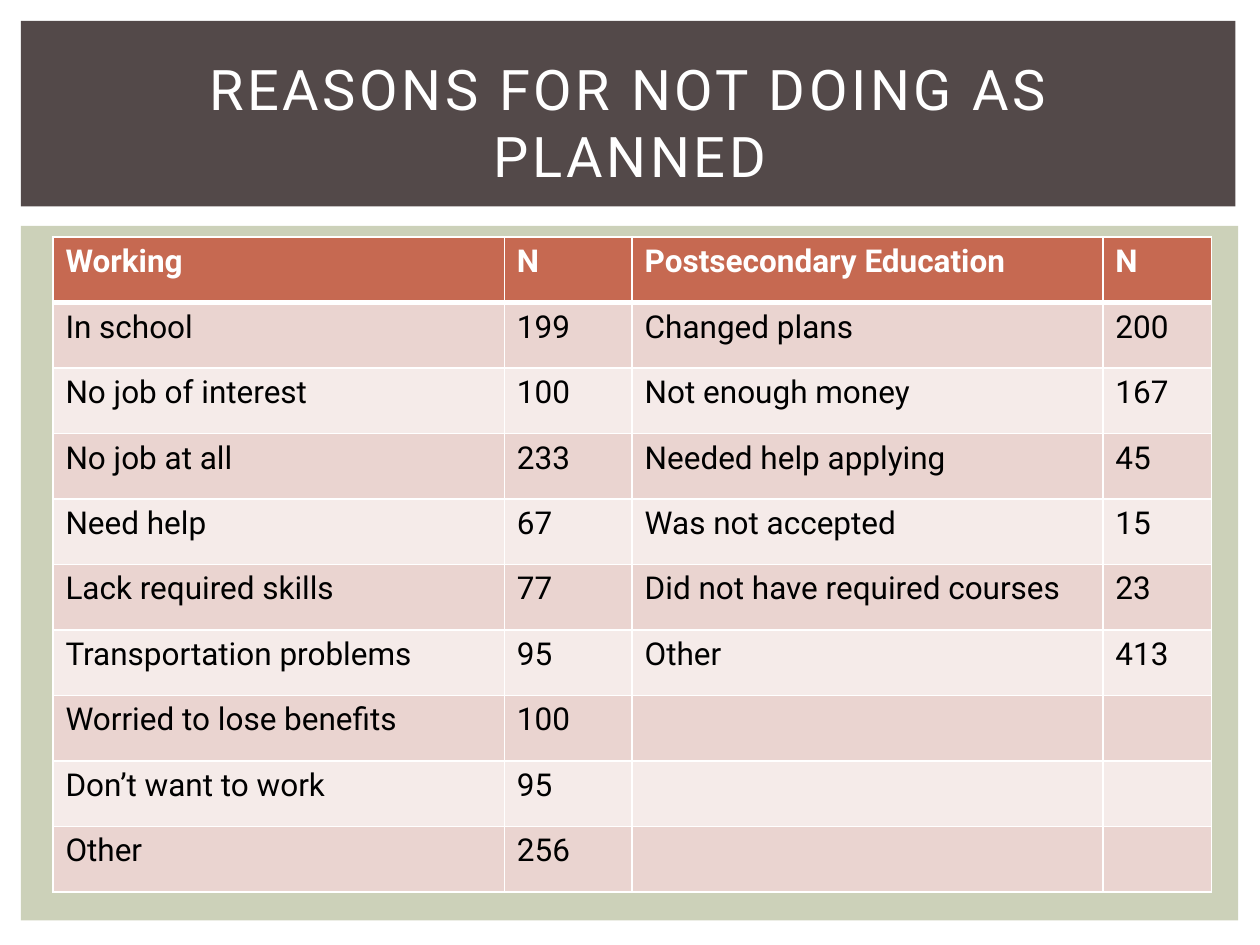
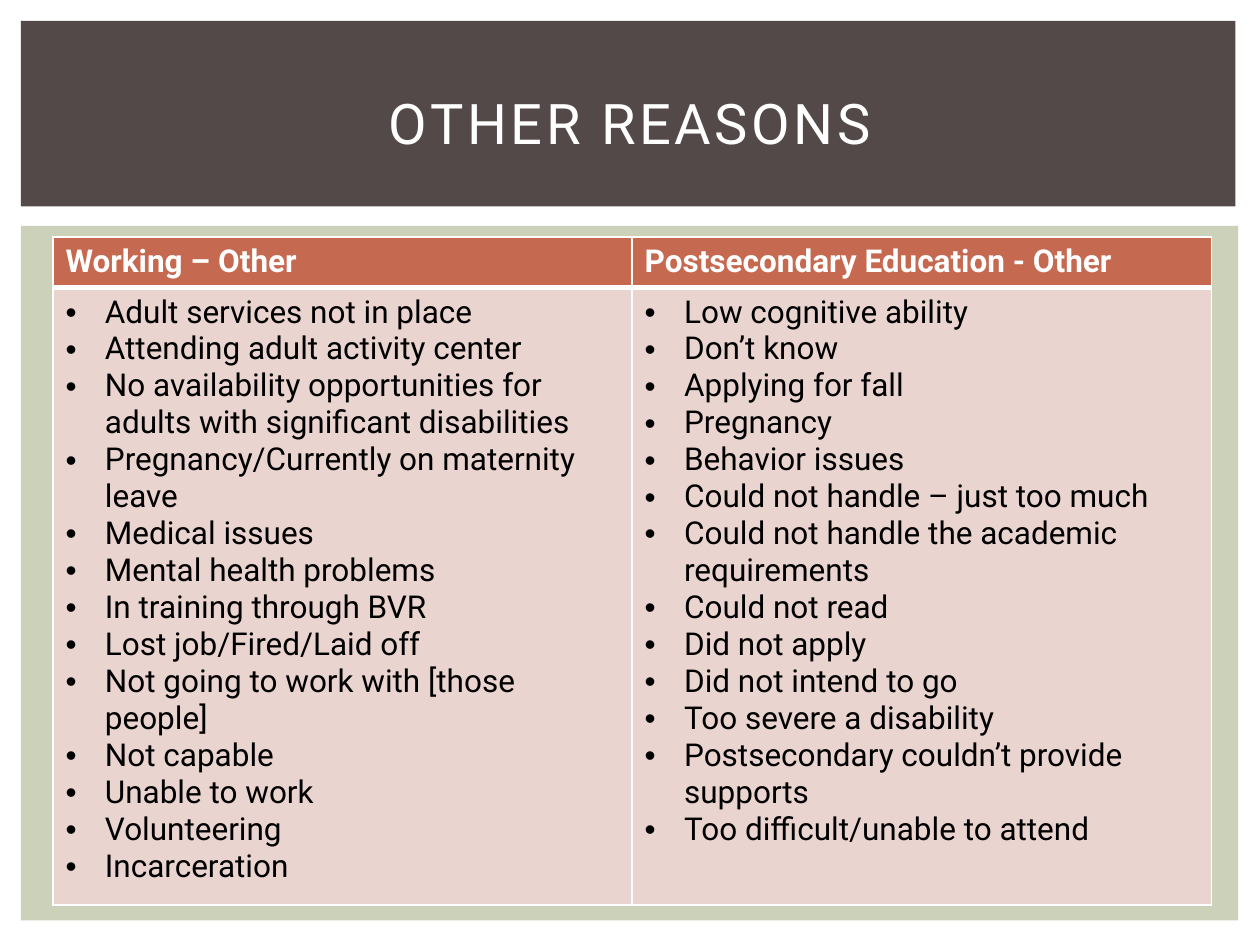
from itertools import zip_longest

from lxml import etree
from pptx import Presentation
from pptx.dml.color import RGBColor
from pptx.enum.shapes import MSO_SHAPE
from pptx.enum.text import MSO_ANCHOR, PP_ALIGN
from pptx.oxml.ns import qn
from pptx.util import Pt

RECTANGLE = MSO_SHAPE.RECTANGLE
MIDDLE = MSO_ANCHOR.MIDDLE
CENTER = PP_ALIGN.CENTER

FONT = "Roboto"
WHITE, BLACK = "FFFFFF", "000000"
BAND, PANEL, HEADER = "534949", "CCD1B9", "C66951"
ROW_FILLS = ["EAD4D0", "F5EBE9"]
TABLE_LEFT, TABLE_TOP = 30.25, 135.5
BULLET_INDENT = 22.5
THIN, THICK = 1, 3

WORKING_REASONS = [
    ("In school", 199),
    ("No job of interest", 100),
    ("No job at all", 233),
    ("Need help", 67),
    ("Lack required skills", 77),
    ("Transportation problems", 95),
    ("Worried to lose benefits", 100),
    ("Don’t want to work", 95),
    ("Other", 256),
]
EDUCATION_REASONS = [
    ("Changed plans", 200),
    ("Not enough money", 167),
    ("Needed help applying", 45),
    ("Was not accepted", 15),
    ("Did not have required courses", 23),
    ("Other", 413),
]
OTHER_WORKING = [
    "Adult services not in place",
    "Attending adult activity center",
    "No availability opportunities for adults with significant disabilities",
    "Pregnancy/Currently on maternity leave",
    "Medical issues",
    "Mental health problems",
    "In training through BVR",
    "Lost job/Fired/Laid off",
    "Not going to work with [those people]",
    "Not capable",
    "Unable to work",
    "Volunteering",
    "Incarceration",
]
OTHER_EDUCATION = [
    "Low cognitive ability",
    "Don’t know",
    "Applying for fall",
    "Pregnancy",
    "Behavior issues",
    "Could not handle – just too much",
    "Could not handle the academic requirements",
    "Could not read",
    "Did not apply",
    "Did not intend to go",
    "Too severe a disability",
    "Postsecondary couldn’t provide supports",
    "Too difficult/unable to attend",
]


def paint(fill, color):
    fill.solid()
    fill.fore_color.rgb = RGBColor.from_string(color)


def set_borders(cell, top, bottom):
    """Draw white cell borders; call before filling, as the schema puts lines first."""
    properties = cell._tc.get_or_add_tcPr()
    for side, width in (("L", THIN), ("R", THIN), ("T", top), ("B", bottom)):
        line = etree.SubElement(properties, qn(f"a:ln{side}"), w=str(Pt(width)))
        solid = etree.SubElement(line, qn("a:solidFill"))
        etree.SubElement(solid, qn("a:srgbClr"), val=WHITE)


def add_bullet(paragraph):
    properties = paragraph._p.get_or_add_pPr()
    properties.set("marL", str(Pt(BULLET_INDENT)))
    properties.set("indent", str(-Pt(BULLET_INDENT)))
    etree.SubElement(properties, qn("a:buFont"), typeface="Arial")
    etree.SubElement(properties, qn("a:buChar"), char="•")


class Deck:
    """Holds the shared style and the slide being built."""

    def __init__(self):
        self.presentation = Presentation()
        self.presentation.slide_width = Pt(720)
        self.presentation.slide_height = Pt(540)
        self.slide = None

    def add_slide(self, title):
        self.slide = self.presentation.slides.add_slide(self.presentation.slide_layouts[6])
        paint(self.slide.background.fill, WHITE)
        self.add_rectangle(12, 129, 695.5, 397, PANEL)
        self.add_rectangle(12, 12, 694, 106, BAND)
        self.add_title(title)

    def add_rectangle(self, left, top, width, height, color):
        shape = self.slide.shapes.add_shape(RECTANGLE, Pt(left), Pt(top), Pt(width), Pt(height))
        shape.shadow.inherit = False
        paint(shape.fill, color)
        shape.line.fill.background()

    def add_title(self, text):
        box = self.slide.shapes.add_textbox(Pt(30), Pt(28), Pt(660), Pt(83))
        text_frame = box.text_frame
        text_frame.word_wrap = True
        text_frame.vertical_anchor = MIDDLE
        text_frame.text = text
        paragraph = text_frame.paragraphs[0]
        paragraph.alignment = CENTER
        self.format_runs(paragraph, 32, WHITE)
        for run in paragraph.runs:
            run.font._element.set("spc", "200")

    def format_runs(self, paragraph, size, color, bold=False):
        for run in paragraph.runs:
            font = run.font
            font.name, font.size, font.bold = FONT, Pt(size), bold
            font.color.rgb = RGBColor.from_string(color)

    def add_table(self, rows, widths, heights, bulleted=False):
        """Add a table whose first row is the header and whose body rows are banded."""
        frame = self.slide.shapes.add_table(
            len(rows), len(widths), Pt(TABLE_LEFT), Pt(TABLE_TOP), Pt(sum(widths)), Pt(sum(heights)))
        table = frame.table
        for column, width in zip(table.columns, widths):
            column.width = Pt(width)
        for row, height in zip(table.rows, heights):
            row.height = Pt(height)
        for row_index, texts in enumerate(rows):
            for column_index, text in enumerate(texts):
                self.fill_cell(table.cell(row_index, column_index), text, row_index, bulleted)

    def fill_cell(self, cell, text, row_index, bulleted):
        is_header = row_index == 0
        set_borders(cell, THICK if row_index == 1 else THIN, THICK if is_header else THIN)
        paint(cell.fill, HEADER if is_header else ROW_FILLS[(row_index - 1) % 2])
        cell.text_frame.text = str(text)
        for paragraph in cell.text_frame.paragraphs:
            self.format_runs(paragraph, 18, WHITE if is_header else BLACK, is_header)
            if bulleted and not is_header:
                add_bullet(paragraph)


def main():
    deck = Deck()

    deck.add_slide("REASONS FOR NOT DOING AS PLANNED")
    reason_rows = [("Working", "N", "Postsecondary Education", "N")]
    for working, education in zip_longest(WORKING_REASONS, EDUCATION_REASONS, fillvalue=("", "")):
        reason_rows.append(working + education)
    deck.add_table(reason_rows, [258, 73, 269, 62], [37.44] * len(reason_rows))

    deck.add_slide("OTHER REASONS")
    other_rows = [
        ("Working – Other", "Postsecondary Education - Other"),
        ("\n".join(OTHER_WORKING), "\n".join(OTHER_EDUCATION)),
    ]
    deck.add_table(other_rows, [331, 331], [27, 342], bulleted=True)

    deck.presentation.save("out.pptx")


if __name__ == "__main__":
    main()
